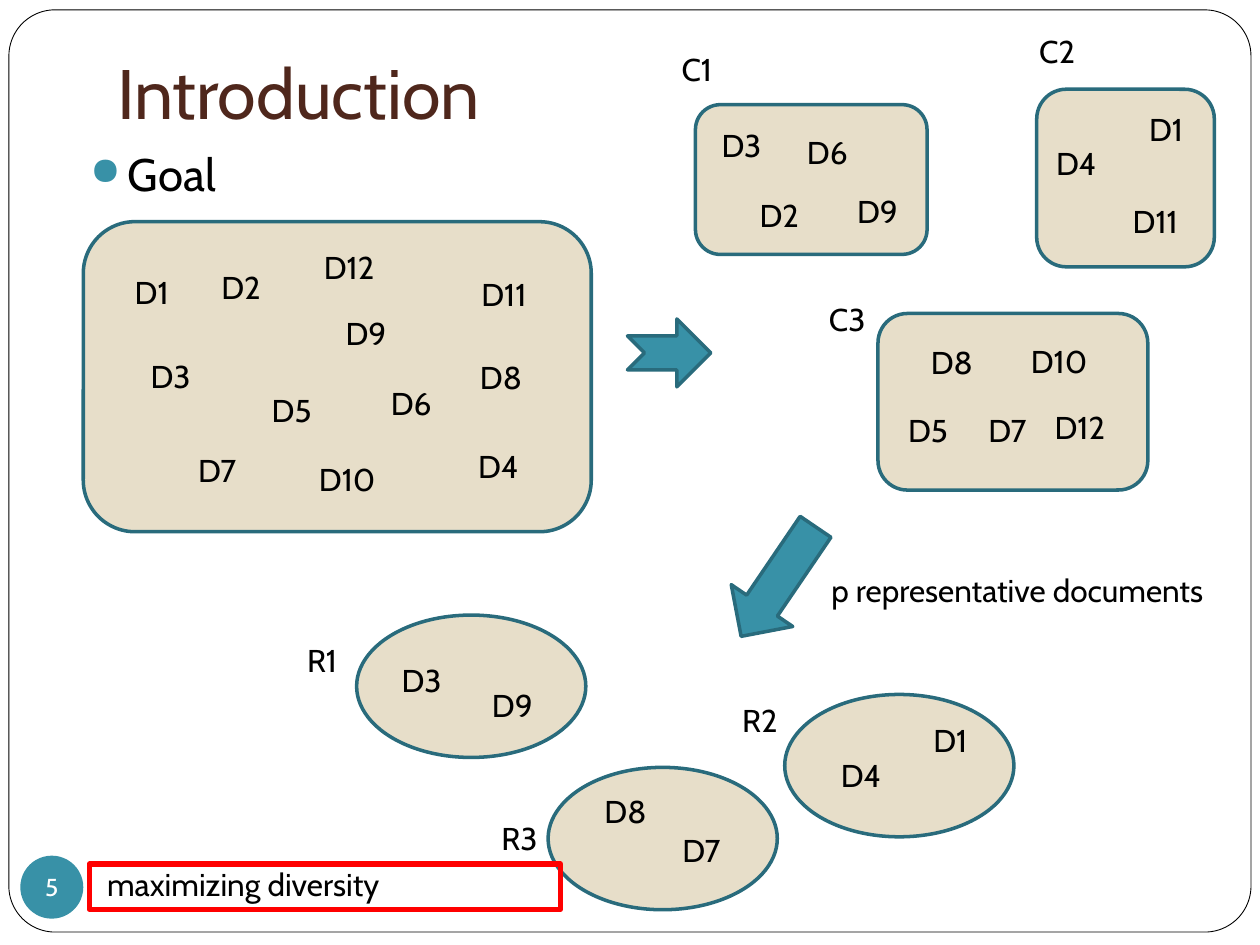
from lxml import etree
from pptx import Presentation
from pptx.dml.color import RGBColor
from pptx.enum.shapes import MSO_SHAPE
from pptx.enum.text import MSO_ANCHOR, PP_ALIGN
from pptx.oxml.ns import qn
from pptx.util import Cm, Pt

ROUND, OVAL, RECT = MSO_SHAPE.ROUNDED_RECTANGLE, MSO_SHAPE.OVAL, MSO_SHAPE.RECTANGLE
NOTCHED, DOWN = MSO_SHAPE.NOTCHED_RIGHT_ARROW, MSO_SHAPE.DOWN_ARROW
TOP, MIDDLE, BOTTOM = MSO_ANCHOR.TOP, MSO_ANCHOR.MIDDLE, MSO_ANCHOR.BOTTOM
LEFT, CENTER = PP_ALIGN.LEFT, PP_ALIGN.CENTER

FONT = "Cabin"
BLACK, WHITE, BROWN, RED = "000000", "FFFFFF", "4F271C", "FF0000"
TEAL, DARK_TEAL, SAND = "3891A7", "296B7C", "E7DEC9"

# Content: all lengths in cm; documents are placed by their centre
POOL = ((1.68, 4.47, 10.24, 6.25), [
    ("D1", 3.06, 5.89), ("D2", 4.86, 5.79), ("D3", 3.44, 7.57), ("D4", 10.05, 9.4),
    ("D5", 5.88, 8.26), ("D6", 8.29, 8.13), ("D7", 4.38, 9.47), ("D8", 10.1, 7.59),
    ("D9", 7.38, 6.71), ("D10", 7, 9.65), ("D11", 10.16, 5.92), ("D12", 7.04, 5.38)])

CLUSTERS = [
    ("C1", (13.49, 0.89), (14.02, 2.11, 4.67, 3.02),
     [("D2", 15.71, 4.33), ("D3", 14.95, 2.93), ("D6", 16.68, 3.06), ("D9", 17.69, 4.25)]),
    ("C2", (20.7, 0.53), (20.9, 1.8, 3.58, 3.58),
     [("D4", 21.7, 3.29), ("D1", 23.51, 2.6), ("D11", 23.29, 4.46)]),
    ("C3", (16.46, 5.92), (17.7, 6.32, 5.44, 3.56),
     [("D5", 18.71, 8.67), ("D8", 19.19, 7.3), ("D7", 20.31, 8.67),
      ("D10", 21.35, 7.28), ("D12", 21.77, 8.6)]),
]

RESULT_SIZE = (4.62, 2.87)
RESULTS = [
    ("R1", (5.94, 12.8), (7.19, 12.4), [("D3", 8.5, 13.7), ("D9", 10.33, 14.21)]),
    ("R2", (14.71, 14), (15.82, 14), [("D4", 17.36, 15.63), ("D1", 19.16, 14.92)]),
    ("R3", (9.86, 16.38), (11.05, 15.47), [("D8", 12.61, 16.34), ("D7", 14.14, 17.13)]),
]

ARROWS = [(NOTCHED, (12.65, 6.43, 1.68, 1.37), 0), (DOWN, (14.94, 10.39, 1.5, 2.67), 34.2)]

DOCUMENT_HEIGHT = 1.6
DOCUMENT_WIDTHS = {2: 2.0, 3: 2.4}  # by number of characters
LABEL_SIZE = (1.24, 1.02)


def rgb(value):
    return RGBColor.from_string(value)


def write(shape, text, size=18, color=BLACK, align=LEFT, anchor=TOP, wrap=True):
    frame = shape.text_frame
    frame.word_wrap = wrap
    frame.vertical_anchor = anchor
    paragraph = frame.paragraphs[0]
    paragraph.alignment = align
    run = paragraph.add_run()
    run.text = text
    run.font.name, run.font.size = FONT, Pt(size)
    run.font.color.rgb = rgb(color)
    return paragraph


def add_shape(kind, box, fill=None, line=None, width=2):
    shape = slide.shapes.add_shape(kind, *map(Cm, box))
    shape.shadow.inherit = False
    if fill:
        shape.fill.solid()
        shape.fill.fore_color.rgb = rgb(fill)
    else:
        shape.fill.background()
    if line:
        shape.line.color.rgb = rgb(line)
        shape.line.width = Pt(width)
    else:
        shape.line.fill.background()
    return shape


def add_text(box, text, **style):
    return write(slide.shapes.add_textbox(*map(Cm, box)), text, **style)


def add_documents(documents):
    for name, x, y in documents:
        width = DOCUMENT_WIDTHS[len(name)]
        box = (x - width / 2, y - DOCUMENT_HEIGHT / 2, width, DOCUMENT_HEIGHT)
        write(add_shape(OVAL, box), name, align=CENTER, anchor=MIDDLE, wrap=False)


def add_bullet(paragraph, char, color, percent, indent):
    properties = paragraph._p.get_or_add_pPr()
    properties.set("marL", str(Cm(indent)))
    properties.set("indent", str(-Cm(indent)))
    bullet_color = etree.SubElement(properties, qn("a:buClr"))
    etree.SubElement(bullet_color, qn("a:srgbClr"), val=color)
    etree.SubElement(properties, qn("a:buSzPct"), val=str(percent * 1000))
    etree.SubElement(properties, qn("a:buChar"), char=char)


presentation = Presentation()
presentation.slide_width, presentation.slide_height = Cm(25.4), Cm(19.05)
slide = presentation.slides.add_slide(presentation.slide_layouts[6])

# Frame, title and bullet
frame = add_shape(ROUND, (0.18, 0.2, 25.04, 18.59), WHITE, BLACK, 0.5)
frame.adjustments[0] = 0.05
title = slide.shapes.add_textbox(*map(Cm, (2.11, 0.33, 21.59, 2.62)))
title.text_frame.margin_bottom = Cm(0.25)
write(title, "Introduction", size=40, color=BROWN, anchor=BOTTOM)
goal = add_text((1.57, 2.82, 21.59, 2.21), "Goal", size=26)
goal.space_before = Pt(5.8)
add_bullet(goal, "●", TEAL, 85, 0.76)

# Document pool and clusters
pool_box, pool_documents = POOL
add_shape(ROUND, pool_box, SAND, DARK_TEAL)
add_documents(pool_documents)
for name, label_at, box, documents in CLUSTERS:
    add_shape(ROUND, box, SAND, DARK_TEAL)
    add_documents(documents)
    add_text(label_at + LABEL_SIZE, name)

# Arrows between the stages
for kind, box, angle in ARROWS:
    add_shape(kind, box, TEAL, DARK_TEAL).rotation = angle
add_text((16.51, 11.38, 8.26, 1.02), "p representative documents")

# Representative documents
for name, label_at, corner, documents in RESULTS:
    add_shape(OVAL, corner + RESULT_SIZE, SAND, DARK_TEAL)
    add_documents(documents)
    add_text(label_at + LABEL_SIZE, name)

# Highlighted aim and slide number
add_text((1.91, 17.32, 6.05, 1.02), "maximizing diversity")
add_shape(RECT, (1.8, 17.42, 9.5, 0.91), line=RED, width=3)
badge = add_shape(OVAL, (0.41, 17.25, 1.27, 1.27), TEAL)
write(badge, "5", size=14, color=WHITE, align=CENTER, anchor=MIDDLE, wrap=False)

presentation.save("out.pptx")
